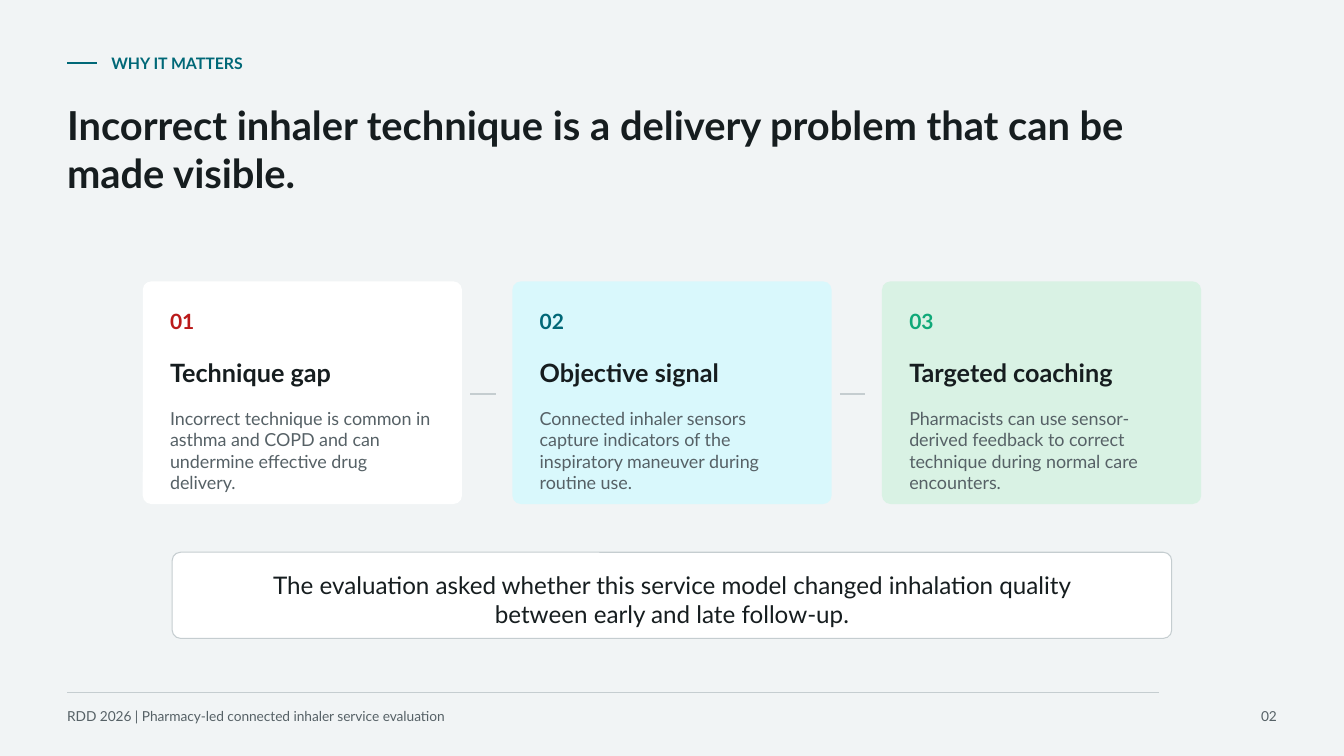
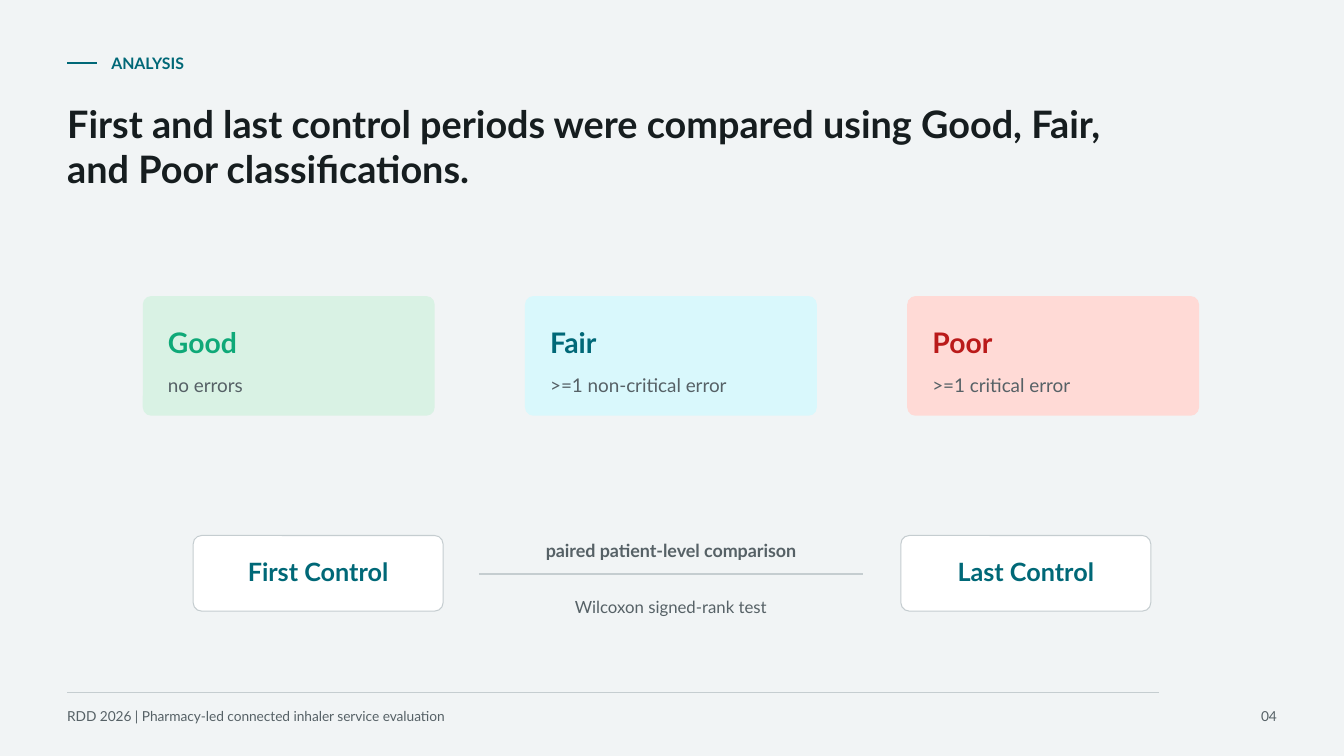
from lxml.etree import SubElement
from pptx import Presentation
from pptx.dml.color import RGBColor
from pptx.enum.shapes import MSO_CONNECTOR, MSO_SHAPE
from pptx.enum.text import MSO_ANCHOR, PP_ALIGN
from pptx.oxml.ns import qn
from pptx.util import Emu, Pt

# Content
FOOTER = "RDD 2026 | Pharmacy-led connected inhaler service evaluation"

MATTERS = {
    "number": "02",
    "eyebrow": "WHY IT MATTERS",
    "title": "Incorrect inhaler technique is a delivery problem that can be made visible.",
    "title_size": 28.5,
    "title_area": (1010, 112),
}
STEPS = [
    ("01", "Technique gap",
     "Incorrect technique is common in asthma and COPD and can undermine "
     "effective drug delivery.", "white", "red"),
    ("02", "Objective signal",
     "Connected inhaler sensors capture indicators of the inspiratory maneuver "
     "during routine use.", "pale_teal", "teal"),
    ("03", "Targeted coaching",
     "Pharmacists can use sensor-derived feedback to correct technique during "
     "normal care encounters.", "pale_green", "green"),
]
QUESTION = ("The evaluation asked whether this service model changed inhalation quality "
            "between early and late follow-up.")

ANALYSIS = {
    "number": "04",
    "eyebrow": "ANALYSIS",
    "title": "First and last control periods were compared using Good, Fair, "
             "and Poor classifications.",
    "title_size": 27,
    "title_area": (1040, 104),
}
CLASSES = [
    ("Good", "no errors", "pale_green", "green"),
    ("Fair", ">=1 non-critical error", "pale_teal", "teal"),
    ("Poor", ">=1 critical error", "pale_red", "red"),
]
PERIODS = ["First Control", "Last Control"]
COMPARISON = "paired patient-level comparison"
TEST = "Wilcoxon signed-rank test"

# Shared look
COLOURS = {
    "background": "F1F4F5", "white": "FFFFFF", "ink": "161D1F", "grey": "566166",
    "rule": "C5CDD0", "teal": "006877", "green": "0FA978", "red": "BA1A1A",
    "pale_teal": "D9F8FC", "pale_green": "D9F2E4", "pale_red": "FFDAD6",
}
FONT = "Lato"
WIDTH, HEIGHT = 1280, 720
MARGIN = 64
CARD_LEFT = 136
RADIUS = 8


def px(length):
    return Emu(length * 9525)


def colour(name):
    return RGBColor.from_string(COLOURS[name])


def add_text(slide, text, area, size, ink="grey", bold=False,
             align=PP_ALIGN.LEFT, anchor=MSO_ANCHOR.TOP):
    frame = slide.shapes.add_textbox(*map(px, area)).text_frame
    frame_format = {"word_wrap": True, "vertical_anchor": anchor, "margin_left": 0,
                    "margin_top": 0, "margin_right": 0, "margin_bottom": 0}
    for name, value in frame_format.items():
        setattr(frame, name, value)
    paragraph = frame.paragraphs[0]
    paragraph.alignment = align
    run = paragraph.add_run()
    run.text = text
    for name, value in {"name": FONT, "size": Pt(size), "bold": bold}.items():
        setattr(run.font, name, value)
    run.font.color.rgb = colour(ink)


def add_card(slide, area, fill, outlined=False):
    card = slide.shapes.add_shape(MSO_SHAPE.ROUNDED_RECTANGLE, *map(px, area))
    card.adjustments[0] = RADIUS / min(area[2:])
    card.shadow.inherit = False
    card.fill.solid()
    card.fill.fore_color.rgb = colour(fill)
    if outlined:
        card.line.color.rgb = colour("rule")
        card.line.width = Pt(0.75)
    else:
        card.line.fill.background()


def add_rule(slide, left, y, width, ink="rule", weight=1.5):
    rule = slide.shapes.add_connector(
        MSO_CONNECTOR.STRAIGHT, px(left), px(y), px(left + width), px(y))
    rule.line.color.rgb = colour(ink)
    rule.line.width = Pt(weight)
    SubElement(rule._element.spPr, qn("a:effectLst"))


def add_page(deck, page):
    slide = deck.slides.add_slide(deck.slide_layouts[6])
    slide.background.fill.solid()
    slide.background.fill.fore_color.rgb = colour("background")
    # Header
    add_rule(slide, MARGIN, 60, 28, "teal")
    add_text(slide, page["eyebrow"], (106, 48, 430, 24), 11.25, "teal", True,
             anchor=MSO_ANCHOR.MIDDLE)
    add_text(slide, page["title"], (MARGIN, 96, *page["title_area"]),
             page["title_size"], "ink", True)
    # Footer
    add_rule(slide, MARGIN, 660, 1040, weight=0.75)
    add_text(slide, FOOTER, (MARGIN, 674, 760, 22), 9.75)
    add_text(slide, page["number"], (WIDTH - MARGIN - 56, 674, 56, 22), 9.75,
             align=PP_ALIGN.RIGHT)
    return slide


def build_matters(deck):
    slide = add_page(deck, MATTERS)
    # Step cards with a dash between neighbours
    top, width, height, gap, inset = 268, 304, 212, 48, 26
    for i, (number, heading, body, fill, accent) in enumerate(STEPS):
        left = CARD_LEFT + i * (width + gap)
        text_left = left + inset
        add_card(slide, (left, top, width, height), fill)
        add_text(slide, number, (text_left, top + inset, 62, 28), 15, accent, True)
        add_text(slide, heading, (text_left, top + 72, 245, 30), 18, "ink", True)
        add_text(slide, body, (text_left, top + 120, width - 2 * inset, 70), 12.75)
        if i < len(STEPS) - 1:
            add_rule(slide, left + width + RADIUS, top + 107, 24)
    # Evaluation question
    add_card(slide, (164, 526, 952, 82), "white", outlined=True)
    add_text(slide, QUESTION, (216, 543, 848, 34), 17.25, "ink",
             align=PP_ALIGN.CENTER)


def build_analysis(deck):
    slide = add_page(deck, ANALYSIS)
    # Classification cards
    top, width, height, gap, inset = 282, 278, 114, 86, 24
    for i, (label, rule, fill, accent) in enumerate(CLASSES):
        left = CARD_LEFT + i * (width + gap)
        add_card(slide, (left, top, width, height), fill)
        add_text(slide, label, (left + inset, top + 28, 210, 32), 20.25, accent, True)
        add_text(slide, rule, (left + inset, top + 74, 210, 24), 13.5)
    # Control periods
    top, width, height, step = 510, 238, 72, 674
    for i, period in enumerate(PERIODS):
        left = 184 + i * step
        add_card(slide, (left, top, width, height), "white", outlined=True)
        add_text(slide, period, (left + 30, top + 20, width - 60, 32), 18, "teal", True,
                 align=PP_ALIGN.CENTER)
    # Comparison between the periods
    add_rule(slide, 456, 547, 366)
    add_text(slide, COMPARISON, (508, 514, 262, 44), 12.75, bold=True,
             align=PP_ALIGN.CENTER)
    add_text(slide, TEST, (536, 568, 206, 22), 12, align=PP_ALIGN.CENTER)


def main():
    deck = Presentation()
    deck.slide_width, deck.slide_height = px(WIDTH), px(HEIGHT)
    build_matters(deck)
    build_analysis(deck)
    deck.save("out.pptx")


if __name__ == "__main__":
    main()
